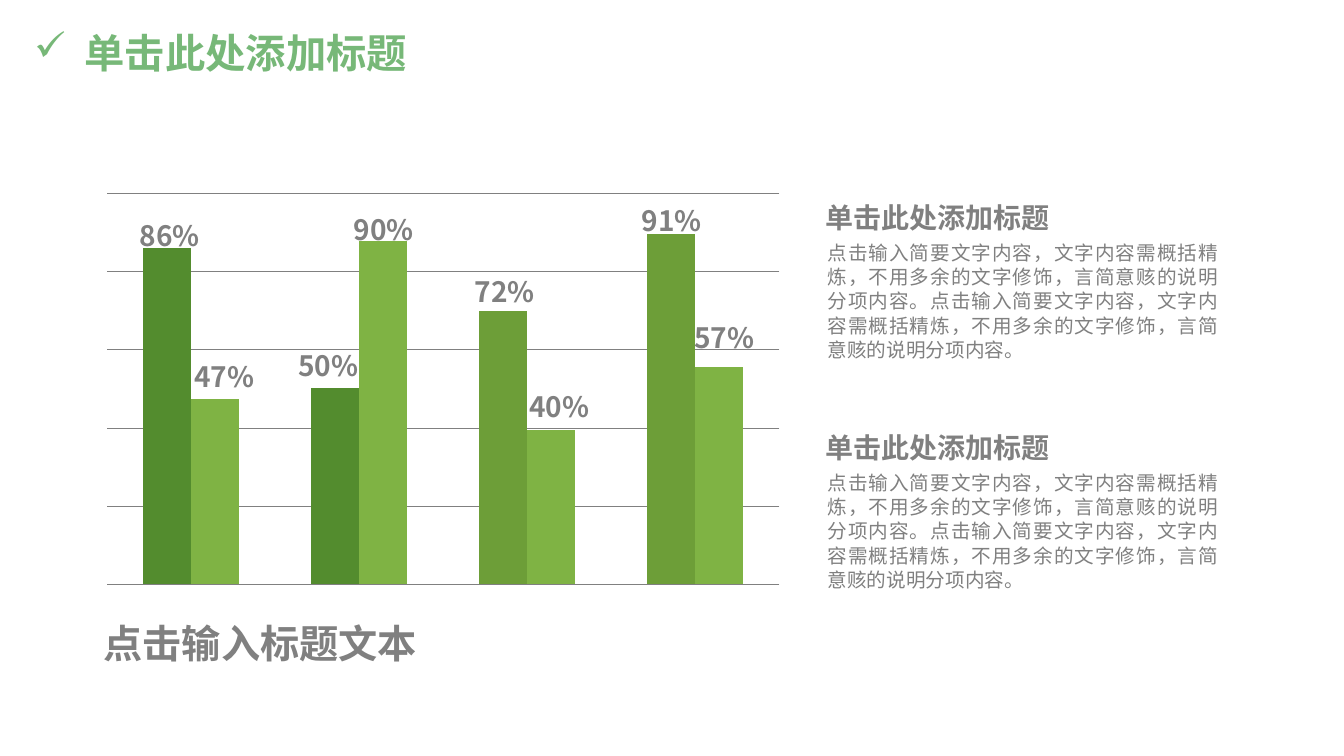
import pptx
import pptx.chart.data
import pptx.dml.color
import pptx.enum.chart
import pptx.enum.text
import pptx.oxml
import pptx.oxml.ns
import pptx.util
from lxml import etree
from pptx.util import Inches

THEME = {
    "title": "77B878", "text": "808080", "chart_text": "000000",
    "title_font": "Montserrat", "body_font": "Noto Sans CJK SC", "chart_font": "Arial",
    "title_size": 28.8, "caption_size": 28, "heading_size": 20, "body_size": 14,
    "chart_size": 18, "line_spacing": 17.4, "grid_width": 0.75,
}

TITLE = "单击此处添加标题"
CAPTION = "点击输入标题文本"
SENTENCE = "点击输入简要文字内容，文字内容需概括精炼，不用多余的文字修饰，言简意赅的说明分项内容。"
SECTIONS = [("单击此处添加标题", SENTENCE * 2, 1.94), ("单击此处添加标题", SENTENCE * 2, 4.22)]
CATEGORIES = ["1", "2", "3", "4"]
# name, values, series colour, colour of each column
SERIES = [
    ("Series 1", (96, 56, 78, 100), "0061B1", ("538C2E", "538C2E", "6D9E38", "6D9E38")),
    ("Series 2", (53, 98, 44, 62), "7F7F7F", ("7FB344",) * 4),
]
# text, left, top
COLUMN_LABELS = [
    ("86%", 1.38, 2.17), ("50%", 2.95, 3.46), ("72%", 4.7, 2.72), ("91%", 6.36, 2.02),
    ("47%", 1.92, 3.57), ("90%", 3.5, 2.11), ("40%", 5.24, 3.86), ("57%", 6.88, 3.18),
]
CHART_BOX = (0.92, 1.84, 6.95, 4.04)
PLOT_LAYOUT = {"x": 0.02, "y": 0.02, "w": 0.96, "h": 0.96}
GRID_STEP, GRID_COUNT = 22.3, 5

ALIGN = pptx.enum.text.PP_ALIGN
ANCHOR = pptx.enum.text.MSO_ANCHOR


def rgb(name):
    return pptx.dml.color.RGBColor.from_string(name)


def add_text(slide, text, box, size, color=THEME["text"], font=THEME["body_font"], bold=True,
             align=None, anchor=ANCHOR.TOP, bullet=None, tight=False):
    """Add a one-paragraph text box; tight means no insets and no wrapping."""
    frame = slide.shapes.add_textbox(*map(Inches, box)).text_frame
    frame.word_wrap = not tight
    frame.vertical_anchor = anchor
    if tight:
        frame.margin_left = frame.margin_right = frame.margin_top = frame.margin_bottom = 0
    paragraph = frame.paragraphs[0]
    paragraph.text = text
    properties = paragraph._p.get_or_add_pPr()
    if bullet:
        properties.set("marL", str(Inches(0.5)))
        properties.set("indent", str(-Inches(0.5)))
        etree.SubElement(properties, pptx.oxml.ns.qn("a:buChar")).set("char", bullet)
    paragraph.alignment = align
    paragraph.font.name = font
    paragraph.font.size = pptx.util.Pt(size)
    paragraph.font.bold = bold
    paragraph.font.color.rgb = rgb(color)
    east_asian = etree.SubElement(properties.find(pptx.oxml.ns.qn("a:defRPr")),
                                  pptx.oxml.ns.qn("a:ea"))
    east_asian.set("typeface", font)
    return paragraph


def set_plot_layout(chart):
    """Fix the inner plot area as fractions of the chart."""
    qn = pptx.oxml.ns.qn
    plot_area = chart._chartSpace.chart.plotArea
    for old in plot_area.findall(qn("c:layout")):
        plot_area.remove(old)
    layout = etree.Element(qn("c:layout"))
    plot_area.insert(0, layout)
    manual = etree.SubElement(layout, qn("c:manualLayout"))
    settings = {"layoutTarget": "inner", "xMode": "edge", "yMode": "edge", **PLOT_LAYOUT}
    for tag, value in settings.items():
        etree.SubElement(manual, qn("c:" + tag)).set("val", str(value))


def add_column_chart(slide):
    data = pptx.chart.data.CategoryChartData()
    data.categories = CATEGORIES
    for name, values, _, _ in SERIES:
        data.add_series(name, values)
    chart = slide.shapes.add_chart(pptx.enum.chart.XL_CHART_TYPE.COLUMN_CLUSTERED,
                                   *map(Inches, CHART_BOX), data).chart
    chart.has_legend = False
    chart.has_title = False
    chart.font.name = THEME["chart_font"]
    chart.font.size = pptx.util.Pt(THEME["chart_size"])
    chart.font.color.rgb = rgb(THEME["chart_text"])
    chart.category_axis.visible = False
    axis = chart.value_axis
    axis.visible = False
    axis.minimum_scale = 0
    axis.maximum_scale = GRID_STEP * GRID_COUNT
    axis.major_unit = GRID_STEP
    axis.has_major_gridlines = True
    grid_line = axis.major_gridlines.format.line
    grid_line.color.rgb = rgb(THEME["text"])
    grid_line.width = pptx.util.Pt(THEME["grid_width"])
    plot = chart.plots[0]
    plot.gap_width = 150
    plot.overlap = 0
    plot.vary_by_categories = False
    for series, (_, _, series_color, column_colors) in zip(plot.series, SERIES):
        series.format.fill.solid()
        series.format.fill.fore_color.rgb = rgb(series_color)
        for index, color in enumerate(column_colors):
            fill = series.points[index].format.fill
            fill.solid()
            fill.fore_color.rgb = rgb(color)
    set_plot_layout(chart)


def main():
    presentation = pptx.Presentation()
    presentation.slide_width = Inches(13.33)
    presentation.slide_height = Inches(7.5)
    slide = presentation.slides.add_slide(presentation.slide_layouts[6])

    add_column_chart(slide)
    add_text(slide, CAPTION, (0.93, 6.03, 3.92, 0.7), THEME["caption_size"], anchor=ANCHOR.MIDDLE)
    for heading, body, top in SECTIONS:
        paragraph = add_text(slide, body, (8.11, top + 0.39, 4.07, 1.29), THEME["body_size"],
                             bold=False, align=ALIGN.JUSTIFY)
        paragraph.line_spacing = pptx.util.Pt(THEME["line_spacing"])
        add_text(slide, heading, (8.09, top, 3.53, 0.44), THEME["heading_size"])
    for text, left, top in COLUMN_LABELS:
        add_text(slide, text, (left, top, 0.61, 0.34), THEME["heading_size"],
                 align=ALIGN.CENTER, tight=True)
    title = add_text(slide, TITLE, (0.24, 0.29, 11.5, 0.51), THEME["title_size"], THEME["title"],
                     THEME["title_font"], anchor=ANCHOR.MIDDLE, bullet="✓")
    title.line_spacing = 0.9

    presentation.save("out.pptx")


if __name__ == "__main__":
    main()
